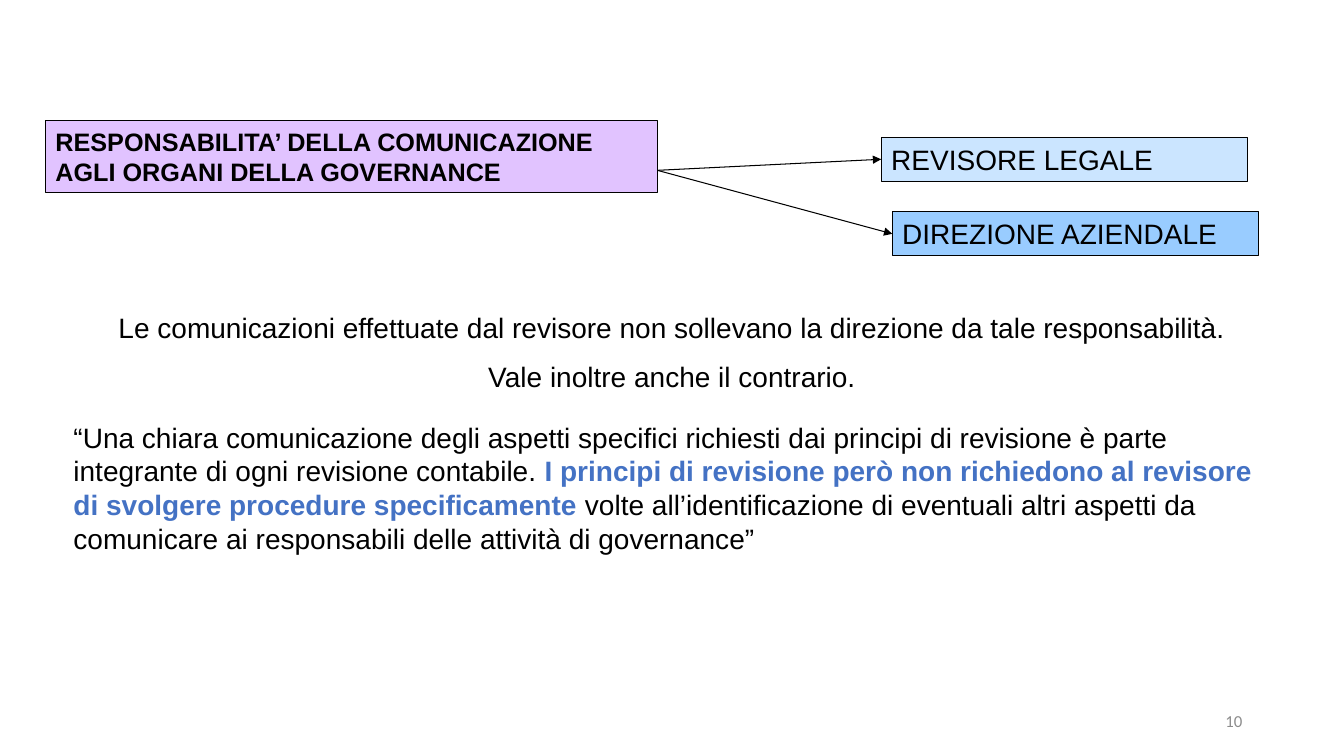
from pptx import Presentation
from pptx.dml.color import RGBColor as RGB
from pptx.enum.shapes import MSO_CONNECTOR as LINK, MSO_SHAPE as SHAPE
from pptx.enum.text import MSO_ANCHOR as ANCHOR, MSO_AUTO_SIZE as FIT, PP_ALIGN as ALIGN
from pptx.oxml.ns import qn
from pptx.util import Inches, Pt
from lxml import etree

HEX = {"ink": "000000", "blue": "99CCFF", "violet": "CC99FF",
       "accent": "4472C4", "grey": "8C8C8C"}

HEAD = "RESPONSABILITA’ DELLA COMUNICAZIONE AGLI ORGANI DELLA GOVERNANCE"
# Label, left, top, opacity in percent
ROLES = [("REVISORE LEGALE", 8.74, 1.36, 51),
         ("DIREZIONE AZIENDALE", 8.85, 2.1, 100)]
# Each paragraph is a list of (text, colour, bold) runs
RULES = [
    [("Le comunicazioni effettuate dal revisore non sollevano la direzione "
      "da tale responsabilità.", "ink", False)],
    [("Vale inoltre anche il contrario.", "ink", False)],
]
QUOTE = [[
    ("“Una chiara comunicazione degli aspetti specifici richiesti dai principi "
     "di revisione è parte integrante di ogni revisione contabile. ", "ink", False),
    ("I principi di revisione però non richiedono al revisore di svolgere "
     "procedure specificamente", "accent", True),
    (" volte all’identificazione di eventuali altri aspetti da comunicare ai "
     "responsabili delle attività di governance”", "ink", False),
]]
NUMBER = [[("10", "grey", False)]]

WIDE, HIGH = 13.33, 7.5
HEAD_AT = (0.45, 1.2, 6.07, 0.71)
ROLE_SIZE = (3.63, 0.44)
FORK = (HEAD_AT[0] + HEAD_AT[2], 1.69)


def color(name):
    return RGB.from_string(HEX[name])


def place(shape, *at):
    shape.left, shape.top, shape.width, shape.height = map(Inches, at)


def write(shape, paras, size=20, font="Arial", align=ALIGN.LEFT, anchor=ANCHOR.TOP):
    frame = shape.text_frame
    frame.word_wrap = True
    frame.auto_size = FIT.NONE
    frame.vertical_anchor = anchor
    for i, runs in enumerate(paras):
        para = frame.add_paragraph() if i else frame.paragraphs[0]
        para.alignment = align
        para.line_spacing = 1.0
        para.space_before = Pt(11 if i else 0)
        for text, hue, bold in runs:
            run = para.add_run()
            run.text = text
            face = run.font
            face.name, face.size, face.bold = font, Pt(size), bold
            face.color.rgb = color(hue)


def paint(shape, hue, share=100):
    """Fill with a colour at an opacity in percent and draw a thin outline."""
    shape.fill.solid()
    shape.fill.fore_color.rgb = color(hue)
    if share < 100:
        tone = shape.fill._xPr.find(qn("a:solidFill"))[0]
        etree.SubElement(tone, qn("a:alpha")).set("val", str(share * 1000))
    shape.line.color.rgb = color("ink")
    shape.line.width = Pt(0.75)


def arrow(shapes, start, box):
    """Draw an arrow from a point to the middle of a box's left side."""
    x, y = map(Inches, start)
    link = shapes.add_connector(LINK.STRAIGHT, x, y, box.left, box.top + box.height // 2)
    link.end_connect(box, 1)
    link.line.color.rgb = color("ink")
    link.line.width = Pt(0.75)
    tip = etree.SubElement(link.line._get_or_add_ln(), qn("a:tailEnd"))
    tip.set("type", "triangle")
    etree.SubElement(link._element.spPr, qn("a:effectLst"))


def note(shapes, at, paras, **style):
    box = shapes.add_textbox(*map(Inches, at))
    write(box, paras, **style)


def main():
    deck = Presentation()
    deck.slide_width, deck.slide_height = Inches(WIDE), Inches(HIGH)
    shapes = deck.slides.add_slide(deck.slide_layouts[5]).shapes

    head = shapes.title
    place(head, *HEAD_AT)
    paint(head, "violet", 58)
    write(head, [[(HEAD, "ink", True)]], size=18)

    for label, left, top, share in ROLES:
        box = shapes.add_shape(SHAPE.RECTANGLE, 0, 0, 0, 0)
        place(box, left, top, *ROLE_SIZE)
        box.shadow.inherit = False
        paint(box, "blue", share)
        write(box, [[(label, "ink", False)]])
        arrow(shapes, FORK, box)

    note(shapes, (0.44, 3.03, 12.45, 0.93), RULES, align=ALIGN.CENTER)
    note(shapes, (0.63, 4.12, 12.12, 1.43), QUOTE)
    note(shapes, (9.42, 6.95, 3, 0.4), NUMBER, size=12, font="Calibri",
         align=ALIGN.RIGHT, anchor=ANCHOR.MIDDLE)
    deck.save("out.pptx")


if __name__ == "__main__":
    main()
